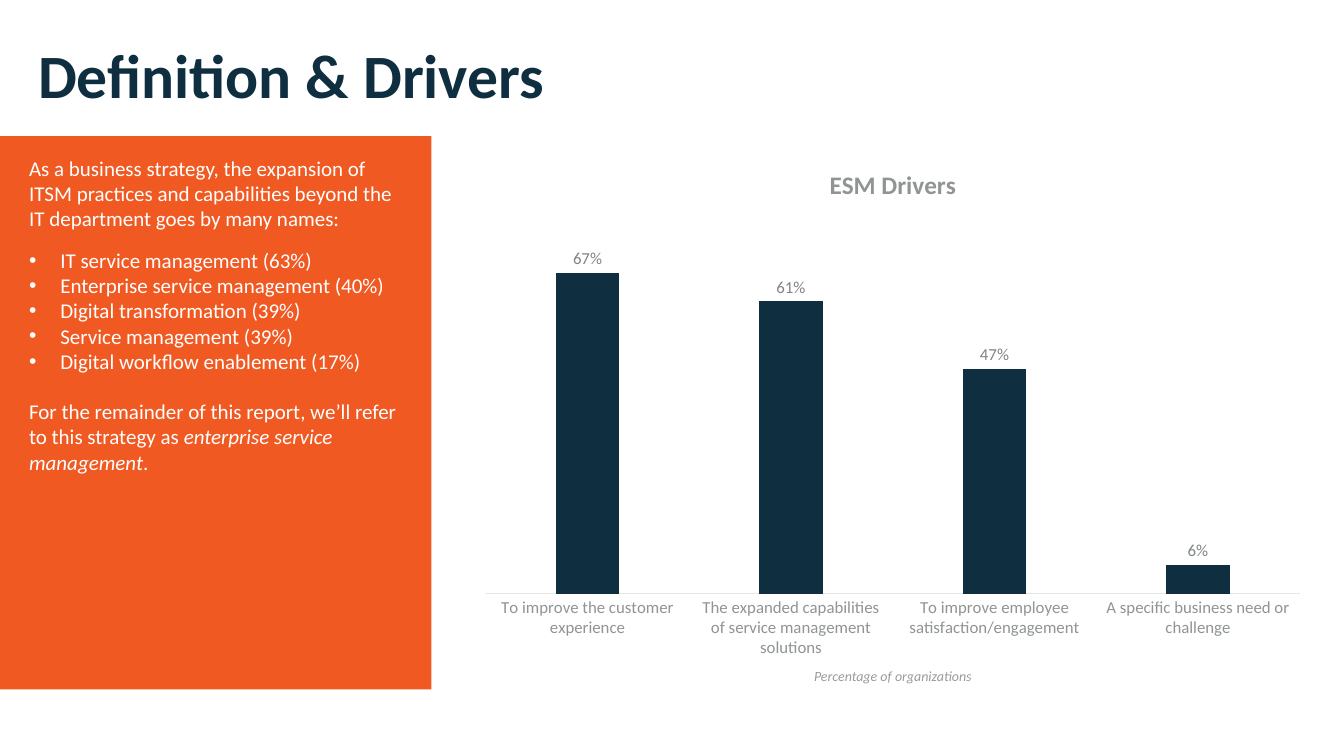
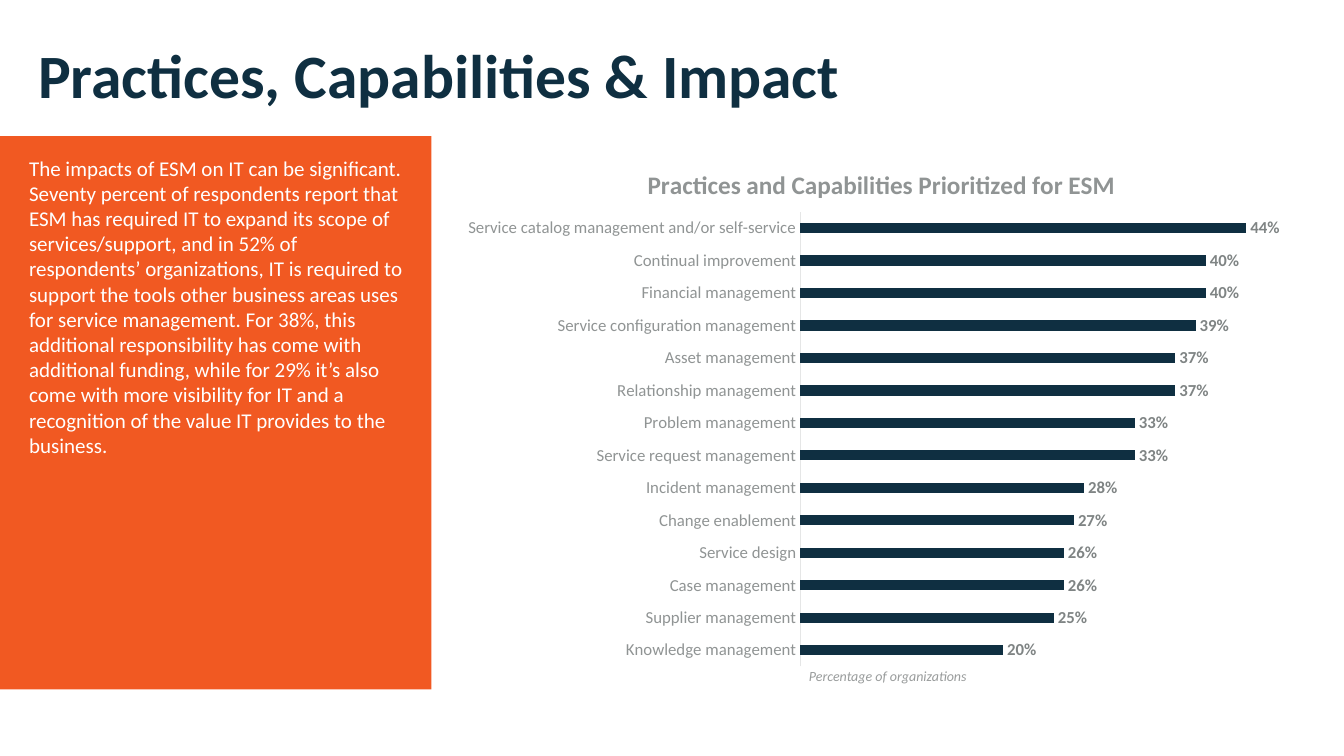
from pptx import Presentation
from pptx.chart.data import CategoryChartData as ChartData
from pptx.dml.color import RGBColor
from pptx.enum.chart import XL_CHART_TYPE as ChartType
from pptx.enum.chart import XL_LABEL_POSITION as LabelPosition
from pptx.enum.chart import XL_TICK_LABEL_POSITION as TickLabels
from pptx.enum.chart import XL_TICK_MARK as TickMark
from pptx.enum.shapes import MSO_SHAPE as Shape
from pptx.enum.text import MSO_ANCHOR as Anchor
from pptx.enum.text import PP_ALIGN as Align
from pptx.oxml import parse_xml
from pptx.oxml.ns import nsdecls
from pptx.util import Pt

PX = 9144
FONT = "Calibri"
COLORS = {
    "navy": "0F2F41",
    "orange": "F15922",
    "white": "FFFFFF",
    "axis_text": "909494",
    "axis_line": "E5E6E6",
    "label": "7F8484",
    "caption": "999C9C",
}
TITLE_BOX = (28, 37, 1249, 82)
PANEL_BOX = (0, 135, 428, 549)
BULLET_INDENT = 31


def color(name):
    return RGBColor.from_string(COLORS[name])


def emu(box):
    return [length * PX for length in box]


def style_font(font, size, name, bold=False, italic=False):
    font.name = FONT
    font.size = Pt(size)
    font.bold = bold
    font.italic = italic
    font.color.rgb = color(name)


def add_run(paragraph, text, size, name, bold=False, italic=False):
    run = paragraph.add_run()
    run.text = text
    style_font(run.font, size, name, bold, italic)


def add_text_frame(slide, box):
    frame = slide.shapes.add_textbox(*emu(box)).text_frame
    frame.word_wrap = True
    return frame


def add_title(slide, box, text):
    frame = add_text_frame(slide, box)
    frame.vertical_anchor = Anchor.MIDDLE
    paragraph = frame.paragraphs[0]
    paragraph.line_spacing = 0.9
    add_run(paragraph, text, 44, "navy", bold=True)


def add_bullet(paragraph):
    properties = paragraph._p.get_or_add_pPr()
    properties.set("marL", str(BULLET_INDENT * PX))
    properties.set("indent", str(-BULLET_INDENT * PX))
    properties.append(parse_xml(f'<a:buFont {nsdecls("a")} typeface="Arial"/>'))
    properties.append(parse_xml(f'<a:buChar {nsdecls("a")} char="•"/>'))


def add_panel(slide, box, intro, bullets=(), closing=()):
    left, top, width, height = box
    panel = slide.shapes.add_shape(Shape.RECTANGLE, *emu(box))
    panel.shadow.inherit = False
    panel.fill.solid()
    panel.fill.fore_color.rgb = color("orange")
    panel.line.fill.background()

    frame = add_text_frame(slide, (left + 19, top + 14, width - 34, height - 169))
    paragraph = frame.paragraphs[0]
    paragraph.space_after = Pt(12)
    add_run(paragraph, intro, 15, "white")
    for text in bullets:
        paragraph = frame.add_paragraph()
        add_bullet(paragraph)
        add_run(paragraph, text, 15, "white")
    if closing:
        paragraph = frame.add_paragraph()
        paragraph.space_before = Pt(18)
        for text, italic in closing:
            add_run(paragraph, text, 15, "white", italic=italic)


def manual_layout(x, y, width=None, height=None):
    inner = width is not None
    parts = ['<c:layoutTarget val="inner"/>'] if inner else []
    parts += ['<c:xMode val="edge"/>', '<c:yMode val="edge"/>']
    parts += [f'<c:x val="{x}"/>', f'<c:y val="{y}"/>']
    if inner:
        parts += [f'<c:w val="{width}"/>', f'<c:h val="{height}"/>']
    content = "".join(parts)
    return parse_xml(
        f'<c:layout {nsdecls("c")}><c:manualLayout>{content}</c:manualLayout></c:layout>'
    )


def place_plot(chart, layout):
    plot_area = chart._chartSpace.chart.plotArea
    for old_layout in plot_area.findall("{*}layout"):
        plot_area.remove(old_layout)
    plot_area.insert(0, manual_layout(*layout))


def place_title(chart, x, y):
    element = chart.chart_title._element
    for old_layout in element.findall("{*}layout"):
        element.remove(old_layout)
    element.find("{*}tx").addnext(manual_layout(x, y))


def add_driver_chart(slide, box, kind, title, title_x, values, maximum, layout,
                     overlap=0, reverse=False, bold_labels=False):
    data = ChartData(number_format="0%")
    data.categories = list(values)
    data.add_series("Series 1", list(values.values()))
    chart = slide.shapes.add_chart(kind, *emu(box), data).chart
    chart.has_legend = False
    style_font(chart.font, 10, "label")

    chart.has_title = True
    add_run(chart.chart_title.text_frame.paragraphs[0], title, 18, "axis_text", bold=True)
    chart.chart_title.include_in_layout = False
    place_title(chart, title_x, 0.05)
    place_plot(chart, layout)

    categories = chart.category_axis
    categories.major_tick_mark = TickMark.NONE
    categories.minor_tick_mark = TickMark.NONE
    categories.tick_label_position = TickLabels.NEXT_TO_AXIS
    categories.has_major_gridlines = False
    categories.reverse_order = reverse
    categories.format.line.color.rgb = color("axis_line")
    categories.format.line.width = Pt(0.75)
    style_font(categories.tick_labels.font, 12, "axis_text")

    scale = chart.value_axis
    scale.minimum_scale = 0
    scale.maximum_scale = maximum
    scale.has_major_gridlines = False
    scale.visible = False

    plot = chart.plots[0]
    plot.gap_width = 219
    plot.overlap = overlap
    plot.vary_by_categories = False
    fill = plot.series[0].format.fill
    fill.solid()
    fill.fore_color.rgb = color("navy")

    plot.has_data_labels = True
    labels = plot.data_labels
    labels.show_value = True
    labels.position = LabelPosition.OUTSIDE_END
    labels.number_format = "0%"
    labels.number_format_is_linked = False
    style_font(labels.font, 12, "label", bold=bold_labels)


def add_caption(slide, box):
    paragraph = add_text_frame(slide, box).paragraphs[0]
    paragraph.alignment = Align.CENTER
    add_run(paragraph, "Percentage of organizations", 10, "caption", italic=True)


def add_report_slide(presentation, title, panel, chart, caption_left):
    slide = presentation.slides.add_slide(presentation.slide_layouts[6])
    add_title(slide, TITLE_BOX, title)
    add_panel(slide, PANEL_BOX, **panel)
    add_driver_chart(slide, **chart)
    add_caption(slide, (caption_left, 657, 365, 27))


DRIVERS_PANEL = {
    "intro": "As a business strategy, the expansion of ITSM practices and capabilities "
             "beyond the IT department goes by many names:",
    "bullets": [
        "IT service management (63%)",
        "Enterprise service management (40%)",
        "Digital transformation (39%)",
        "Service management (39%)",
        "Digital workflow enablement (17%)",
    ],
    "closing": [
        ("For the remainder of this report, we’ll refer to this strategy as ", False),
        ("enterprise service management", True),
        (".", False),
    ],
}
DRIVERS_CHART = {
    "box": (465, 135, 841, 528),
    "kind": ChartType.COLUMN_CLUSTERED,
    "title": "ESM Drivers",
    "title_x": 0.42,
    "values": {
        "To improve the customer experience": 0.67,
        "The expanded capabilities of service management solutions": 0.61,
        "To improve employee satisfaction/engagement": 0.47,
        "A specific business need or challenge": 0.06,
    },
    "maximum": 0.8,
    "layout": (0.02, 0.14, 0.96, 0.72),
    "overlap": -27,
}
IMPACT_PANEL = {
    "intro": "The impacts of ESM on IT can be significant. Seventy percent of respondents "
             "report that ESM has required IT to expand its scope of services/support, and "
             "in 52% of respondents’ organizations, IT is required to support the tools "
             "other business areas uses for service management. For 38%, this additional "
             "responsibility has come with additional funding, while for 29% it’s also come "
             "with more visibility for IT and a recognition of the value IT provides to the "
             "business.",
}
PRACTICES_CHART = {
    "box": (447, 135, 867, 537),
    "kind": ChartType.BAR_CLUSTERED,
    "title": "Practices and Capabilities Prioritized for ESM",
    "title_x": 0.22,
    "values": {
        "Service catalog management and/or self-service": 0.44,
        "Continual improvement": 0.4,
        "Financial management": 0.4,
        "Service configuration management": 0.39,
        "Asset management": 0.37,
        "Relationship management": 0.37,
        "Problem management": 0.33,
        "Service request management": 0.33,
        "Incident management": 0.28,
        "Change enablement": 0.27,
        "Service design": 0.26,
        "Case management": 0.26,
        "Supplier management": 0.25,
        "Knowledge management": 0.2,
    },
    "maximum": 0.5,
    "layout": (0.4, 0.14, 0.58, 0.84),
    "reverse": True,
    "bold_labels": True,
}


def main():
    presentation = Presentation()
    presentation.slide_width = 1333 * PX
    presentation.slide_height = 750 * PX
    add_report_slide(presentation, "Definition & Drivers",
                     DRIVERS_PANEL, DRIVERS_CHART, 703)
    add_report_slide(presentation, "Practices, Capabilities & Impact",
                     IMPACT_PANEL, PRACTICES_CHART, 698)
    presentation.save("out.pptx")


if __name__ == "__main__":
    main()
